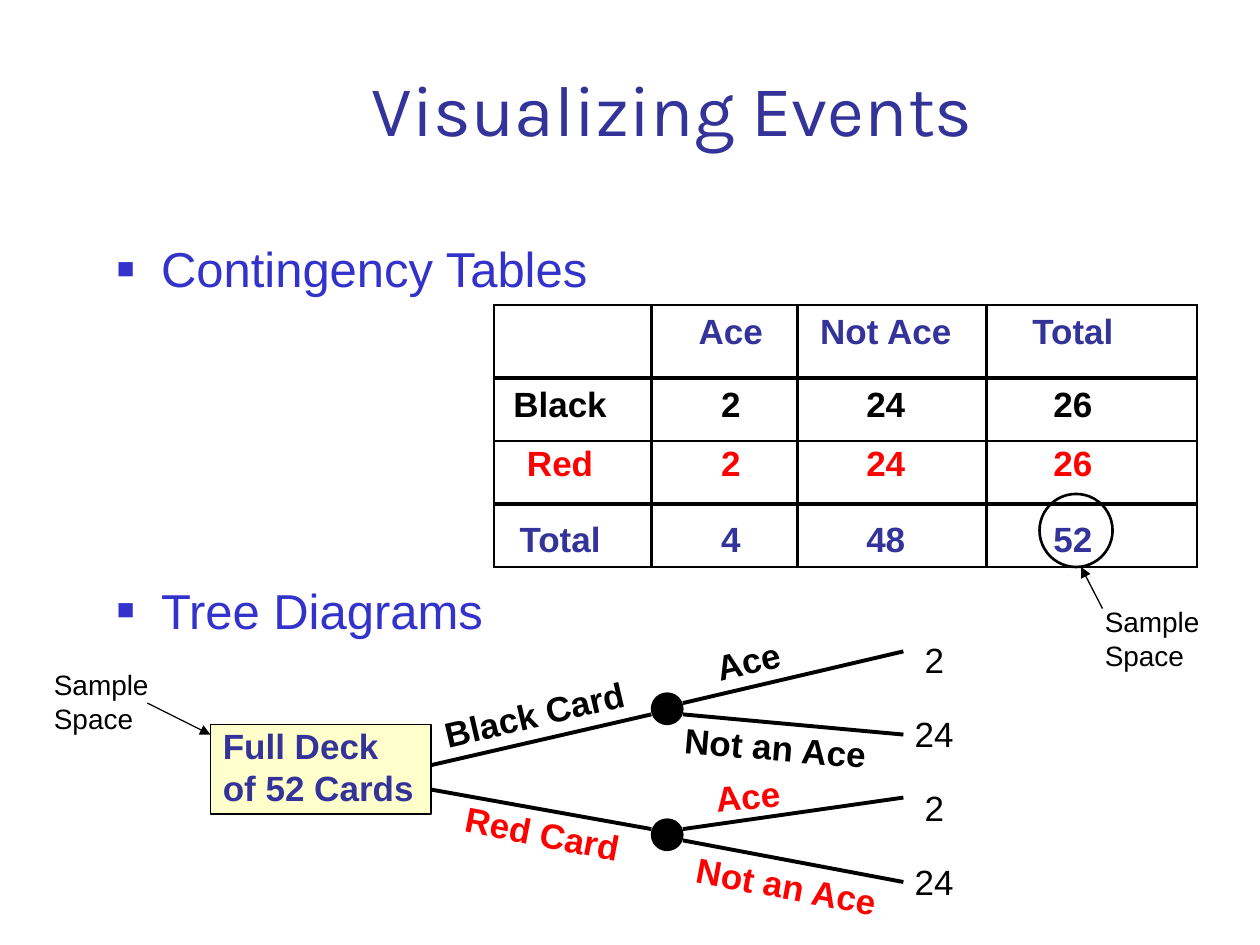
from lxml.etree import SubElement
from pptx import Presentation
from pptx.dml.color import RGBColor
from pptx.enum.shapes import MSO_CONNECTOR, MSO_SHAPE
from pptx.enum.text import MSO_ANCHOR, PP_ALIGN
from pptx.oxml import parse_xml
from pptx.oxml.ns import nsdecls, qn
from pptx.util import Inches, Pt

NAVY = RGBColor(0x33, 0x33, 0x99)
BLUE = RGBColor(0x33, 0x33, 0xCC)
RED = RGBColor(0xFF, 0x00, 0x00)
BLACK = RGBColor(0x00, 0x00, 0x00)
CREAM = RGBColor(0xFF, 0xFF, 0xCC)


def add_run(paragraph, text, size, color, bold=False, font="Arial"):
    run = paragraph.add_run()
    run.text = text
    run.font.name = font
    run.font.size = Pt(size)
    run.font.bold = bold
    run.font.color.rgb = color


def add_label(slide, box, lines, size, color, bold=False, font="Arial",
              align=PP_ALIGN.LEFT, spacing=1.0, gap=0, rotation=0):
    label = slide.shapes.add_textbox(*map(Inches, box))
    label.rotation = rotation
    frame = label.text_frame
    frame.word_wrap = True
    for index, line in enumerate(lines):
        paragraph = frame.paragraphs[0] if index == 0 else frame.add_paragraph()
        paragraph.alignment = align
        paragraph.line_spacing = spacing
        if index:
            paragraph.space_before = Pt(gap)
        add_run(paragraph, line, size, color, bold, font)
    return frame


def add_line(slide, start, end, width, arrow=False):
    line = slide.shapes.add_connector(
        MSO_CONNECTOR.STRAIGHT, *map(Inches, (*start, *end)))
    line.line.color.rgb = BLACK
    line.line.width = Pt(width)
    properties = line._element.spPr
    if arrow:
        SubElement(properties.find(qn("a:ln")), qn("a:tailEnd"), type="triangle")
    SubElement(properties, qn("a:effectLst"))


def add_outline(slide, kind, box, width, fill=None):
    outline = slide.shapes.add_shape(kind, *map(Inches, box))
    outline.shadow.inherit = False
    outline.line.color.rgb = BLACK
    outline.line.width = Pt(width)
    if fill is None:
        outline.fill.background()
    else:
        outline.fill.solid()
        outline.fill.fore_color.rgb = fill
    return outline


def add_title(slide, box):
    frame = add_label(slide, box, ["Visualizing Events"], 41, NAVY,
                      font="Karla", align=PP_ALIGN.CENTER, spacing=1.1)
    frame.vertical_anchor = MSO_ANCHOR.BOTTOM


def add_topics(slide, box):
    frame = add_label(slide, box, ["Contingency Tables", "Tree Diagrams"], 28,
                      BLUE, spacing=1.1, gap=158)
    for paragraph in frame.paragraphs:
        properties = paragraph._p.get_or_add_pPr()
        properties.set("marL", str(Inches(0.35)))
        properties.set("indent", str(-Inches(0.35)))
        color = SubElement(properties, qn("a:buClr"))
        SubElement(color, qn("a:srgbClr"), val=str(BLUE))
        SubElement(properties, qn("a:buSzPct"), val="60000")
        SubElement(properties, qn("a:buFont"), typeface="Arial")
        SubElement(properties, qn("a:buChar"), char="■")


def set_borders(cell, top, bottom):
    properties = cell._tc.get_or_add_tcPr()
    widths = {"lnL": 1.5, "lnR": 1.5, "lnT": top, "lnB": bottom}
    for index, (side, width) in enumerate(widths.items()):
        properties.insert(index, parse_xml(
            f'<a:{side} {nsdecls("a")} w="{Pt(width)}"><a:solidFill>'
            f'<a:srgbClr val="{BLACK}"/></a:solidFill></a:{side}>'))


def add_contingency_table(slide, box):
    rows = [
        (["", "Ace", "Not Ace", "Total"], NAVY, 0.58, 0.06),
        (["Black", "2", "24", "26"], BLACK, 0.5, 0.06),
        (["Red", "2", "24", "26"], RED, 0.5, 0.03),
        (["Total", "4", "48", "52"], NAVY, 0.5, 0.13),
    ]
    columns = [(1.25, 0, 0.2), (1.16, 0.1, 0), (1.5, 0, 0.1), (1.67, 0, 0.3)]
    rules = [1.5, 2, 0.75, 2, 1.5]
    table = slide.shapes.add_table(
        len(rows), len(columns), *map(Inches, box)).table
    table.first_row = False
    table.horz_banding = False
    for column, (width, _, _) in zip(table.columns, columns):
        column.width = Inches(width)
    for r, (texts, color, height, top) in enumerate(rows):
        table.rows[r].height = Inches(height)
        for c, (text, (_, left, right)) in enumerate(zip(texts, columns)):
            cell = table.cell(r, c)
            cell.fill.background()
            set_borders(cell, rules[r], rules[r + 1])
            cell.margin_left, cell.margin_right = Inches(left), Inches(right)
            cell.margin_top, cell.margin_bottom = Inches(top), Inches(0)
            if text:
                paragraph = cell.text_frame.paragraphs[0]
                paragraph.alignment = PP_ALIGN.CENTER
                add_run(paragraph, text, 20, color, True)
    left, top = box[:2]
    add_outline(slide, MSO_SHAPE.OVAL, (left + 4.33, top + 1.5, 0.58, 0.58), 1.5)


def add_sample_space(slide, box, start, end):
    left, top = box[:2]
    add_label(slide, box, ["Sample Space"], 16, BLACK)
    add_line(slide, (left + start[0], top + start[1]),
             (left + end[0], top + end[1]), 0.75, arrow=True)


def add_tree(slide, box):
    left, top, _, height = box
    branches = [((1.72, 1.16), 0.58, 0.75, (0.25, 0.91)),
                ((1.66, 1.33), 1.58, 1.66, (1.41, 2.08))]
    for trunk, node, joint, tips in branches:
        add_line(slide, (left + trunk[0], top + trunk[1]),
                 (left + 3.5, top + joint), 2.25)
        for offset, tip in zip((0.08, 0.17), tips):
            add_line(slide, (left + 3.75, top + node + offset),
                     (left + 5.5, top + tip), 2.25)
        add_outline(slide, MSO_SHAPE.OVAL,
                    (left + 3.5, top + node, 0.25, 0.25), 0.75, BLACK)

    deck = add_outline(slide, MSO_SHAPE.RECTANGLE,
                       (left, top + 0.83, 1.75, 0.71), 1, CREAM).text_frame
    deck.vertical_anchor = MSO_ANCHOR.TOP
    deck.margin_top = Inches(0)
    for index, line in enumerate(["Full Deck", "of 52 Cards"]):
        paragraph = deck.add_paragraph() if index else deck.paragraphs[0]
        paragraph.alignment = PP_ALIGN.LEFT
        add_run(paragraph, line, 20, NAVY, True)

    events = [
        ("Black Card", BLACK, 1.75, 0.58, 1.75, 0.36, -13.1, 0.8),
        ("Red Card", RED, 1.91, 1.58, 1.58, 0.33, 11.1, 0.7),
        ("Ace", BLACK, 3.91, 0.08, 0.92, 0.43, -13.5, 1.0),
        ("Not an Ace", BLACK, 3.66, 0.8, 1.83, 0.5, 4.9, 1.0),
        ("Ace", RED, 3.91, 1.16, 1.08, 0.43, -5.9, 1.0),
        ("Not an Ace", RED, 3.75, 1.91, 1.83, 0.43, 10.6, 1.0),
    ]
    for event, color, x, y, w, h, angle, spacing in events:
        add_label(slide, (left + x, top + y, w, h), [event], 20, color, True,
                  rotation=angle, spacing=spacing)
    add_label(slide, (left + 5.41, top, 0.67, height), ["2", "24", "2", "24"],
              20, BLACK, align=PP_ALIGN.CENTER, spacing=1.3, gap=11)


def main():
    deck = Presentation()
    deck.slide_width, deck.slide_height = Inches(10), Inches(7.5)
    slide = deck.slides.add_slide(deck.slide_layouts[6])
    add_title(slide, (1.08, 0.42, 8.52, 0.83))
    add_topics(slide, (0.83, 1.8, 8.83, 4.5))
    add_contingency_table(slide, (3.92, 2.42, 5.58, 2.08))
    add_tree(slide, (1.67, 4.92, 6.08, 2.33))
    add_sample_space(slide, (0.33, 5.25, 1, 0.63), (0.84, 0.33), (1.34, 0.58))
    add_sample_space(slide, (8.67, 4.75, 1, 0.63), (0.08, 0.08), (-0.09, -0.25))
    deck.save("out.pptx")


if __name__ == "__main__":
    main()
